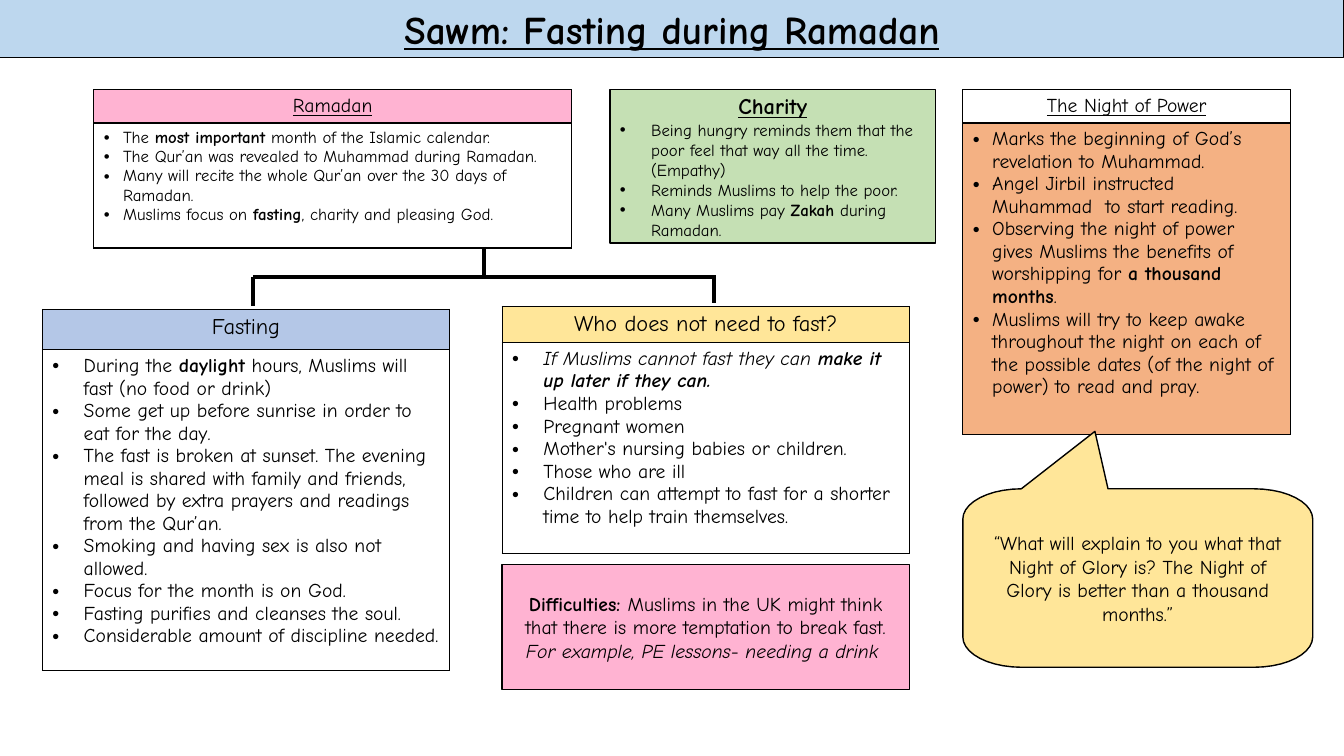
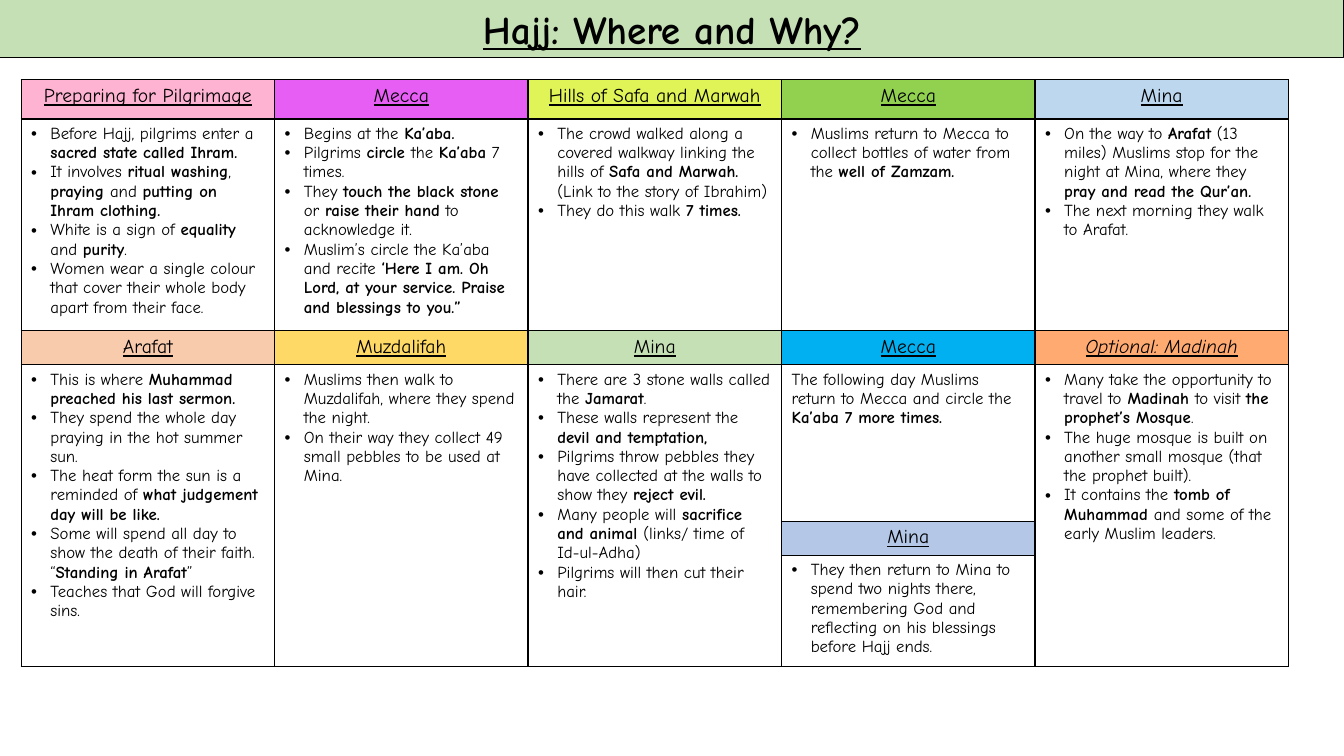
"""Build two revision slides on Sawm and Hajj."""
from dataclasses import dataclass
from math import cos, pi, sin

from lxml.etree import SubElement
from pptx import Presentation
from pptx.dml.color import RGBColor
from pptx.enum.shapes import MSO_CONNECTOR as CONN, MSO_SHAPE as SHAPE
from pptx.enum.text import MSO_ANCHOR as ANCHOR, PP_ALIGN as ALIGN
from pptx.oxml.ns import qn
from pptx.util import Inches, Pt

FONT = "Comic Neue"
NARROW, WIDE = 0.19, 0.31
COLORS = {
    "black": "000000", "white": "FFFFFF", "sky": "BDD7EE", "sage": "C5E0B4",
    "pink": "FFB3D2", "blue": "B4C7E7", "cream": "FFE699", "orange": "F4B183",
    "magenta": "E65EF4", "lime": "E0F357", "green": "92D050", "peach": "F8CBAD",
    "gold": "FFD966", "cyan": "00B0F0", "apricot": "FFAA71",
}


@dataclass
class Card:
    left: float
    top: float
    width: float
    heights: tuple[float, float]
    title: str
    fill: str
    points: list[str]
    title_size: int = 14
    size: int = 14
    underline: bool = True
    indent: float = NARROW
    body_fill: str = "white"


@dataclass
class Stage:
    row: int
    col: int
    title: str
    fill: str
    points: list[str]
    span: int = 1
    indent: float = NARROW


CARDS = [
    Card(0.93, 0.89, 4.74, (0.33, 1.24), "Ramadan", "pink", [
        "The *most important* month of the Islamic calendar.",
        "The Qur’an was revealed to Muhammad during Ramadan.",
        "Many will recite the whole Qur’an over the 30 days of Ramadan.",
        "Muslims focus on *fasting*, charity and pleasing God.",
    ], size=12),
    Card(0.42, 3.07, 4.04, (0.4, 3.18), "Fasting", "blue", [
        "During the *daylight* hours, Muslims will fast (no food or drink)",
        "Some get up before sunrise in order to eat for the day.",
        "The fast is broken at sunset. The evening meal is shared with family and friends, "
        "followed by extra prayers and readings from the Qur’an.",
        "Smoking and having sex is also not allowed.",
        "Focus for the month is on God.",
        "Fasting purifies and cleanses the soul.",
        "Considerable amount of discipline needed.",
    ], title_size=16, underline=False, indent=WIDE),
    Card(4.98, 3.04, 4.04, (0.36, 2.09), "Who does not need to fast?", "cream", [
        "_If Muslims cannot fast they can *make it up later if they can.*_",
        "Health problems",
        "Pregnant women",
        "Mother's nursing babies or children.",
        "Those who are ill",
        "Children can attempt to fast for a shorter time to help train themselves.",
    ], title_size=16, underline=False, indent=WIDE),
    Card(9.55, 0.89, 3.25, (0.33, 3.09), "The Night of Power", "white", [
        "Marks the beginning of God’s revelation to Muhammad.",
        "Angel Jirbil instructed Muhammad  to start reading.",
        "Observing the night of power gives Muslims the benefits of worshipping for "
        "*a thousand months*.",
        "Muslims will try to keep awake throughout the night on each of the possible dates "
        "(of the night of power) to read and pray.",
    ], body_fill="orange"),
]

CHARITY = [
    "Being hungry reminds them that the poor feel that way all the time. (Empathy)",
    "Reminds Muslims to help the poor.",
    "Many Muslims pay *Zakah *during Ramadan.",
]
DIFFICULTIES = ("*Difficulties: *Muslims in the UK might think that there is more temptation "
                "to break fast. _For example, PE lessons- needing a drink _")
QUOTE = ("“What will explain to you what that Night of Glory is? The Night of Glory is better "
         "than a thousand months.”")
BRANCHES = [
    (2.51, 2.75, 2.51, 3.04),
    (7.08, 2.75, 2.51, 2.75),
    (7.08, 2.73, 7.08, 3.01),
    (4.8, 2.45, 4.8, 2.73),
]

STAGE_HEIGHTS = [0.39, 2.1, 0.34, 1.55, 0.34, 1.1]
STAGES = [
    Stage(0, 0, "Preparing for Pilgrimage", "pink", [
        "Before Hajj, pilgrims enter a *sacred state called Ihram.*",
        "It involves *ritual washing*, *praying *and *putting on Ihram clothing.*",
        "White is a sign of *equality *and *purity*.",
        "Women wear a single colour that cover their whole body apart from their face.",
    ]),
    Stage(0, 1, "Mecca", "magenta", [
        "Begins at the *Ka’aba.*",
        "Pilgrims *circle *the *Ka’aba* 7 times.",
        "They *touch the black stone* or *raise their hand* to acknowledge it.",
        "Muslim’s circle the Ka’aba and recite *‘Here I am. Oh Lord, at your service. "
        "Praise and blessings to you.”*",
    ]),
    Stage(0, 2, "Hills of Safa and Marwah", "lime", [
        "The crowd walked along a covered walkway linking the hills of *Safa and Marwah.* "
        "(Link to the story of Ibrahim)",
        "They do this walk *7 times.*",
    ]),
    Stage(0, 3, "Mecca", "green", [
        "Muslims return to Mecca to collect bottles of water from the *well of Zamzam.*",
    ]),
    Stage(0, 4, "Mina", "sky", [
        "On the way to *Arafat* (13 miles) Muslims stop for the night at Mina, where they "
        "*pray and read the Qur’an.*",
        "The next morning they walk to Arafat.",
    ]),
    Stage(2, 0, "Arafat", "peach", [
        "This is where *Muhammad preached his last sermon.*",
        "They spend the whole day praying in the hot summer sun.",
        "The heat form the sun is a reminded of *what judgement day will be like.*",
        "Some will spend all day to show the death of their faith. “*Standing in Arafat*”",
        "Teaches that God will forgive sins.",
    ], span=3),
    Stage(2, 1, "Muzdalifah", "gold", [
        "Muslims then walk to Muzdalifah, where they spend the night.",
        "On their way they collect 49 small pebbles to be used at Mina.",
    ], span=3),
    Stage(2, 2, "Mina", "sage", [
        "There are 3 stone walls called the *Jamarat*.",
        "These walls represent the *devil and temptation,*",
        "Pilgrims throw pebbles they have collected at the walls to show they *reject evil.*",
        "Many people will *sacrifice and animal *(links/ time of Id-ul-Adha)",
        "Pilgrims will then cut their hair.",
    ], span=3),
    Stage(2, 3, "Mecca", "cyan", [
        "The following day Muslims return to Mecca and circle the *Ka’aba 7 more times.*",
    ], indent=0),
    Stage(2, 4, "_Optional: Madinah_", "apricot", [
        "Many take the opportunity to travel to* Madinah *to visit *the prophet’s Mosque*.",
        "The huge mosque is built on another small mosque (that the prophet built).",
        "It contains the *tomb of Muhammad *and some of the early Muslim leaders.",
    ], span=3),
    Stage(4, 3, "Mina", "blue", [
        "They then return to Mina to spend two nights there, remembering God and reflecting "
        "on his blessings before Hajj ends.",
    ]),
]


def rgb(name: str) -> RGBColor:
    """Look up a palette colour."""
    return RGBColor.from_string(COLORS[name])


def write(tf, text: str, size: int = 14, bold: bool = False, underline: bool = False,
          align=ALIGN.LEFT, indent: float = 0) -> None:
    """Add a paragraph where *stars* mark bold and _underscores_ mark italic."""
    p = tf.add_paragraph() if tf.text else tf.paragraphs[0]
    p.alignment = align
    if indent:
        pPr = p._p.get_or_add_pPr()
        pPr.set("marL", str(Inches(indent)))
        pPr.set("indent", str(-Inches(indent)))
        SubElement(pPr, qn("a:buFont"), typeface="Arial")
        SubElement(pPr, qn("a:buChar"), char="•")
    for i, part in enumerate(text.split("_")):
        for j, piece in enumerate(part.split("*")):
            if piece:
                r = p.add_run()
                r.text = piece
                r.font.name, r.font.size = FONT, Pt(size)
                r.font.color.rgb = rgb("black")
                r.font.bold = bold or j % 2 == 1
                r.font.italic = i % 2 == 1
                r.font.underline = underline


def style(sp, fill: str, weight: float = 1):
    """Give a shape its fill and outline and return its text frame."""
    sp.shadow.inherit = False
    sp.fill.solid()
    sp.fill.fore_color.rgb = rgb(fill)
    sp.line.color.rgb = rgb("black")
    sp.line.width = Pt(weight)
    tf = sp.text_frame
    tf.word_wrap = True
    tf.vertical_anchor = ANCHOR.MIDDLE
    return tf


def add_box(s, left: float, top: float, width: float, height: float, fill: str,
            weight: float = 1):
    """Draw a rectangle and return its text frame."""
    sp = s.shapes.add_shape(SHAPE.RECTANGLE, Inches(left), Inches(top),
                            Inches(width), Inches(height))
    return style(sp, fill, weight)


def add_slide(prs, title: str, fill: str):
    """Add a blank slide with its title band."""
    s = prs.slides.add_slide(prs.slide_layouts[6])
    tf = add_box(s, 0, 0, 13.33, 0.57, fill, 0.75)
    write(tf, title, size=28, bold=True, underline=True, align=ALIGN.CENTER)
    return s


def add_grid(s, left: float, top: float, widths: list[float], heights):
    """Add an unstyled table with thin black borders."""
    table = s.shapes.add_table(len(heights), len(widths), Inches(left), Inches(top),
                               Inches(sum(widths)), Inches(sum(heights))).table
    table.first_row = table.horz_banding = False
    for col, width in zip(table.columns, widths):
        col.width = Inches(width)
    for row, height in zip(table.rows, heights):
        row.height = Inches(height)
    for cell in table.iter_cells():
        tcPr = cell._tc.get_or_add_tcPr()
        for side in ("lnL", "lnR", "lnT", "lnB"):
            ln = SubElement(tcPr, qn(f"a:{side}"), w=str(Pt(1)))
            SubElement(SubElement(ln, qn("a:solidFill")), qn("a:srgbClr"), val=COLORS["black"])
        cell.fill.solid()
        cell.fill.fore_color.rgb = rgb("white")
    return table


def fill_cell(cell, fill: str, paragraphs: list[str], **fmt) -> None:
    """Colour a cell and write its paragraphs."""
    cell.fill.fore_color.rgb = rgb(fill)
    for text in paragraphs:
        write(cell.text_frame, text, **fmt)


def add_card(s, card: Card) -> None:
    """Draw a heading cell above a cell of bullet points."""
    table = add_grid(s, card.left, card.top, [card.width], card.heights)
    fill_cell(table.cell(0, 0), card.fill, [card.title], size=card.title_size,
              underline=card.underline, align=ALIGN.CENTER)
    fill_cell(table.cell(1, 0), card.body_fill, card.points, size=card.size, indent=card.indent)


def add_line(s, x1: float, y1: float, x2: float, y2: float) -> None:
    """Draw a thick black connector."""
    c = s.shapes.add_connector(CONN.STRAIGHT, Inches(x1), Inches(y1), Inches(x2), Inches(y2))
    c.line.color.rgb = rgb("black")
    c.line.width = Pt(3)
    SubElement(c._element.spPr, qn("a:effectLst"))


def add_bubble(s, text: str) -> None:
    """Draw a speech bubble with elliptical corners and a tail on top."""
    left, top, right, bottom, rx, ry, tip, steps = 9.55, 4.85, 13.02, 6.62, 0.58, 0.3, 4.28, 10
    centres = [(right - rx, bottom - ry), (left + rx, bottom - ry),
               (left + rx, top + ry), (right - rx, top + ry)]
    points = [(cx + rx * cos(a), cy + ry * sin(a))
              for q, (cx, cy) in enumerate(centres)
              for a in ((q + k / steps) * pi / 2 for k in range(steps + 1))]
    tail = [(10.13, top), (10.86, tip), (10.99, top)]
    cut = 3 * (steps + 1)
    outline = [(Inches(x), Inches(y)) for x, y in points[:cut] + tail + points[cut:]]
    fb = s.shapes.build_freeform(*outline[0])
    fb.add_line_segments(outline[1:], close=True)
    tf = style(fb.convert_to_shape(), "cream")
    tf.margin_left = tf.margin_right = Inches(0.25)
    tf.margin_top = Inches(top - tip + 0.05)
    write(tf, text, align=ALIGN.CENTER)


def build_sawm(prs) -> None:
    """Build the fasting slide."""
    s = add_slide(prs, "Sawm: Fasting during Ramadan", "sky")
    for card in CARDS:
        add_card(s, card)
    for branch in BRANCHES:
        add_line(s, *branch)
    write(add_box(s, 4.98, 5.6, 4.04, 1.24, "pink"), DIFFICULTIES, align=ALIGN.CENTER)
    tf = add_box(s, 6.05, 0.89, 3.23, 1.52, "sage")
    write(tf, "Charity", size=16, bold=True, underline=True, align=ALIGN.CENTER)
    for text in CHARITY:
        write(tf, text, size=12, indent=WIDE)
    add_bubble(s, QUOTE)


def build_hajj(prs) -> None:
    """Build the pilgrimage slide."""
    s = add_slide(prs, "Hajj: Where and Why?", "sage")
    table = add_grid(s, 0.21, 0.79, [2.514] * 5, STAGE_HEIGHTS)
    for st in STAGES:
        fill_cell(table.cell(st.row, st.col), st.fill, [st.title], underline=True,
                  align=ALIGN.CENTER)
        body = table.cell(st.row + 1, st.col)
        if st.span > 1:
            body.merge(table.cell(st.row + st.span, st.col))
        fill_cell(body, "white", st.points, size=12, indent=st.indent)


def main() -> None:
    """Build and save the presentation."""
    prs = Presentation()
    prs.slide_width, prs.slide_height = Inches(13.33), Inches(7.5)
    build_sawm(prs)
    build_hajj(prs)
    prs.save("out.pptx")


if __name__ == "__main__":
    main()
